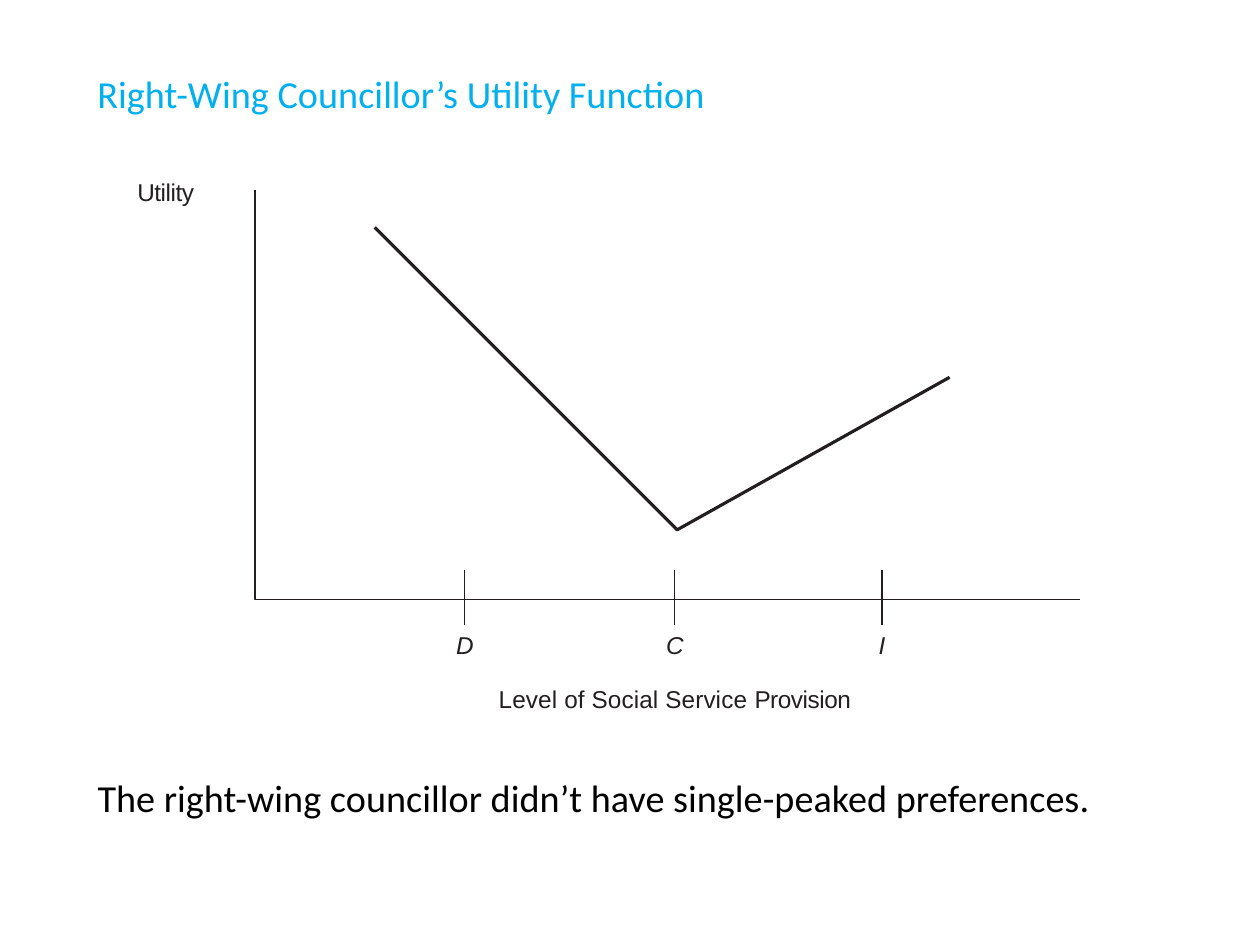
from pptx import Presentation
from pptx.dml.color import RGBColor
from pptx.enum.text import MSO_ANCHOR, PP_ALIGN as Align
from pptx.util import Inches, Pt

BLUE = RGBColor(0x00, 0xB0, 0xF0)
BLACK = RGBColor(0x00, 0x00, 0x00)
INK = RGBColor(0x23, 0x1F, 0x20)

TICKS = {"D": 1.86, "C": 2.7, "I": 3.53}
LEFT, RIGHT, TOP, BASE = 1.02, 4.32, 0.76, 2.4


def add_text(slide, box, *paras, font="Arial", size=7, color=INK,
             align=Align.LEFT, inset=0.02, before=1.2):
    """Each paragraph is a list of (text, italic, letter spacing in points)."""
    frame = slide.shapes.add_textbox(*map(Inches, box)).text_frame
    frame.word_wrap = True
    frame.vertical_anchor = MSO_ANCHOR.TOP
    frame.margin_left = frame.margin_right = frame.margin_bottom = 0
    frame.margin_top = Inches(inset)
    for i, runs in enumerate(paras):
        para = frame.add_paragraph() if i else frame.paragraphs[0]
        para.alignment = align
        para.space_before = Pt(7.2 if i else before)
        for text, italic, gap in runs:
            run = para.add_run()
            run.text = text
            run.font.name = font
            run.font.size = Pt(size)
            run.font.italic = italic
            run.font.color.rgb = color
            if gap:
                run.font._element.set("spc", str(round(gap * 100)))


def add_path(slide, strokes, width):
    """Draw open strokes, each a list of points in inches, as one outline."""
    first, *rest = [[(Inches(x), Inches(y)) for x, y in s] for s in strokes]
    pen = slide.shapes.build_freeform(*first[0])
    pen.add_line_segments(first[1:], close=False)
    for points in rest:
        pen.move_to(*points[0])
        pen.add_line_segments(points[1:], close=False)
    shape = pen.convert_to_shape()
    shape.shadow.inherit = False
    shape.fill.background()
    shape.line.color.rgb = INK
    shape.line.width = Pt(width)


def main():
    # A 363 by 272.5 point page, about 5.04 by 3.78 inches
    deck = Presentation()
    deck.slide_width, deck.slide_height = Pt(363), Pt(272.5)
    slide = deck.slides.add_slide(deck.slide_layouts[6])
    large = dict(font="Calibri", size=11, inset=0.01, before=0.9)

    # Title
    add_text(slide, (0.39, 0.27, 2.57, 0.2),
             [("Right-Wing Councillor’s Utility Function", False, 0)],
             color=BLUE, **large)

    # Axes with ticks, then the utility curve
    axes = [(LEFT, TOP), (LEFT, BASE), (RIGHT, BASE)]
    ticks = [[(x, BASE - 0.12), (x, BASE + 0.1)] for x in TICKS.values()]
    add_path(slide, [axes, *ticks], 0.45)
    add_path(slide, [[(1.5, 0.91), (2.71, 2.12), (3.8, 1.51)]], 0.9)

    # Axis labels
    add_text(slide, (0.55, 0.69, 0.27, 0.15), [("Utility", False, -0.1)])
    for name in "DI":
        add_text(slide, (TICKS[name] - 0.05, 2.5, 0.1, 0.15),
                 [(name, True, -0.5)], align=Align.CENTER)
    add_text(slide, (TICKS["C"] - 0.74, 2.5, 1.48, 0.37),
             [("C", True, -0.5)],
             [("Level of Social Service ", False, 0.05),
              ("Provision", False, -0.1)],
             align=Align.CENTER)

    # Conclusion
    add_text(slide, (0.39, 3.09, 4.05, 0.2),
             [("The right-wing councillor didn’t have single-peaked "
               "preferences.", False, 0)],
             color=BLACK, **large)

    deck.save("out.pptx")


if __name__ == "__main__":
    main()
